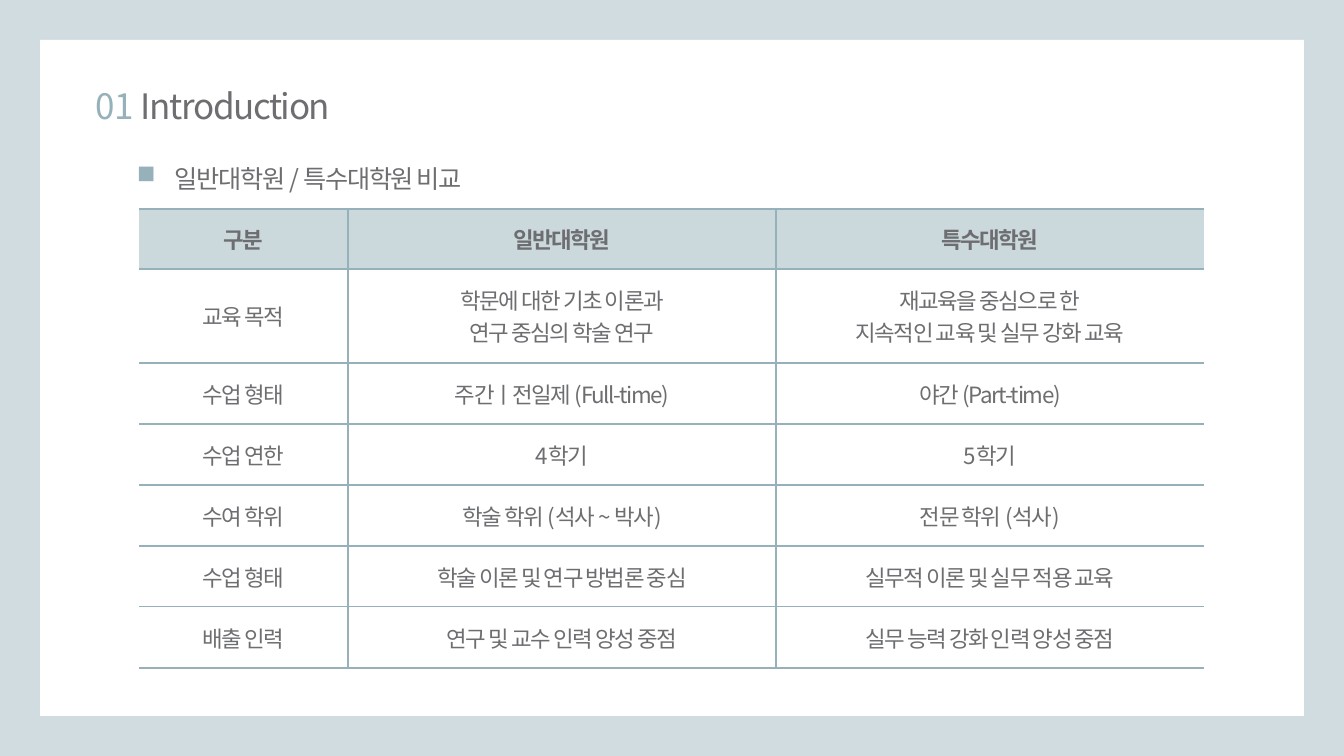
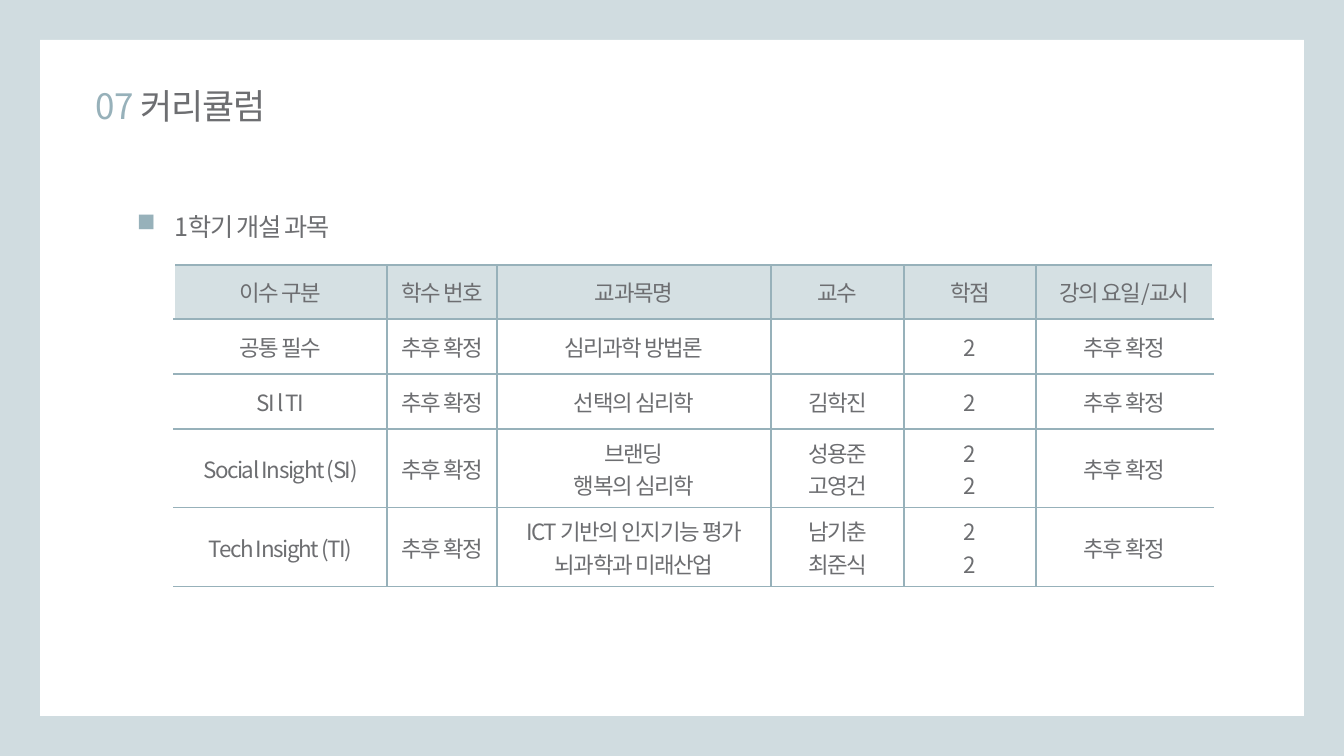
"""Build two table slides on graduate school programmes."""
from lxml import etree
from pptx import Presentation
from pptx import util as u
from pptx.dml.color import RGBColor
from pptx.enum import shapes, text
from pptx.oxml.ns import qn

FONT = "Noto Sans CJK KR"
COLORS = {"back": "D0DCE0", "panel": "FFFFFF", "accent": "97B1BA", "ink": "6D6E71",
          "head": "CBD8DC", "pale": "D5E0E3"}
WIDTH, HEIGHT, FRAME = 1344, 756, 40
THIN, THICK = 1, 2.25
PLAIN_STYLE = "{2D5ABB26-0587-4C30-8999-92F81FD0307C}"

SLIDES = [
    {
        "number": "01", "title": "Introduction",
        "subtitle": "일반대학원 / 특수대학원 비교", "subtitle_top": 158,
        "at": (139, 209), "cols": [209, 428, 428], "heights": [60, 94] + [61] * 5,
        "head": "head", "bold": True, "rule": THICK, "side": None,
        "rows": [
            ("구분", "일반대학원", "특수대학원"),
            ("교육 목적", "학문에 대한 기초 이론과\n연구 중심의 학술 연구",
             "재교육을 중심으로 한\n지속적인 교육 및 실무 강화 교육"),
            ("수업 형태", "주간ㅣ전일제 (Full-time)", "야간 (Part-time)"),
            ("수업 연한", "4학기", "5학기"),
            ("수여 학위", "학술 학위 (석사 ~ 박사)", "전문 학위 (석사)"),
            ("수업 형태", "학술 이론 및 연구 방법론 중심", "실무적 이론 및 실무 적용 교육"),
            ("배출 인력", "연구 및 교수 인력 양성 중점", "실무 능력 강화 인력 양성 중점"),
        ],
    },
    {
        "number": "07", "title": "커리큘럼",
        "subtitle": "1학기 개설 과목", "subtitle_top": 206,
        "at": (174, 265), "cols": [213, 110, 274, 133, 132, 177],
        "heights": [54, 55, 55, 79, 79],
        "head": "pale", "bold": False, "rule": THIN, "side": "panel",
        "rows": [
            ("이수 구분", "학수 번호", "교과목명", "교수", "학점", "강의 요일/교시"),
            ("공통 필수", "추후 확정", "심리과학 방법론", "", "2", "추후 확정"),
            ("SI l TI", "추후 확정", "선택의 심리학", "김학진", "2", "추후 확정"),
            ("Social Insight (SI)", "추후 확정", "브랜딩\n행복의 심리학",
             "성용준\n고영건", "2\n2", "추후 확정"),
            ("Tech Insight (TI)", "추후 확정", "ICT 기반의 인지기능 평가\n뇌과학과 미래산업",
             "남기춘\n최준식", "2\n2", "추후 확정"),
        ],
    },
]


def px(n):
    return u.Emu(round(n * 12192000 / WIDTH))


def rgb(name):
    return RGBColor.from_string(COLORS[name])


def style(p, size, color="ink", bold=False, spacing=-100):
    f = p.font
    f.size, f.bold, f.name = u.Pt(size), bold, FONT
    f.color.rgb = rgb(color)
    rpr = p._p.pPr.find(qn("a:defRPr"))
    rpr.set("spc", str(spacing))
    etree.SubElement(rpr, qn("a:ea"), typeface=FONT)


def add_text(s, box, words, size, **look):
    tf = s.shapes.add_textbox(*map(px, box)).text_frame
    tf.word_wrap = True
    tf.vertical_anchor = text.MSO_ANCHOR.MIDDLE
    tf.text = words
    p = tf.paragraphs[0]
    style(p, size, **look)
    return p


def add_bullet(p):
    ppr = p._p.get_or_add_pPr()
    ppr.set("marL", str(px(38)))
    ppr.set("indent", str(px(-38)))
    color = etree.Element(qn("a:buClr"))
    etree.SubElement(color, qn("a:srgbClr"), val=COLORS["accent"])
    mark = etree.Element(qn("a:buChar"), char="■")
    ppr.insert(0, color)
    ppr.insert(1, mark)


def add_border(cell, side, width, color):
    ln = etree.SubElement(cell._tc.get_or_add_tcPr(), qn(f"a:ln{side}"), w=str(u.Pt(width)))
    if color is None:
        etree.SubElement(ln, qn("a:noFill"))
    else:
        fill = etree.SubElement(ln, qn("a:solidFill"))
        etree.SubElement(fill, qn("a:srgbClr"), val=COLORS[color])


def add_grid(s, d):
    rows, cols, heights = d["rows"], d["cols"], d["heights"]
    box = (*d["at"], sum(cols), sum(heights))
    table = s.shapes.add_table(len(rows), len(cols), *map(px, box)).table
    table.first_row = table.horz_banding = False
    table._tbl.tblPr.find(qn("a:tableStyleId")).text = PLAIN_STYLE
    for column, width in zip(table.columns, cols):
        column.width = px(width)
    last_row, last_col = len(rows) - 1, len(cols) - 1
    for i, (row, height) in enumerate(zip(rows, heights)):
        table.rows[i].height = px(height)
        for j, words in enumerate(row):
            cell = table.cell(i, j)
            cell.vertical_anchor = text.MSO_ANCHOR.MIDDLE
            add_border(cell, "L", THIN, "accent" if j else d["side"])
            add_border(cell, "R", THIN, "accent" if j < last_col else d["side"])
            add_border(cell, "T", d["rule"] if i < 2 else THIN, "accent")
            add_border(cell, "B", d["rule"] if i in (0, last_row) else THIN, "accent")
            if i:
                cell.fill.background()
            else:
                cell.fill.solid()
                cell.fill.fore_color.rgb = rgb(d["head"])
            cell.text_frame.text = words
            for p in cell.text_frame.paragraphs:
                p.alignment = text.PP_ALIGN.CENTER
                style(p, 16, bold=d["bold"] and i == 0)


def add_base(prs):
    s = prs.slides.add_slide(prs.slide_layouts[6])
    s.background.fill.solid()
    s.background.fill.fore_color.rgb = rgb("back")
    box = (FRAME, FRAME, WIDTH - 2 * FRAME, HEIGHT - 2 * FRAME)
    sp = s.shapes.add_shape(shapes.MSO_SHAPE.RECTANGLE, *map(px, box))
    sp.shadow.inherit = False
    sp.fill.solid()
    sp.fill.fore_color.rgb = rgb("panel")
    sp.line.fill.background()
    return s


def main():
    prs = Presentation()
    prs.slide_width, prs.slide_height = px(WIDTH), px(HEIGHT)
    for d in SLIDES:
        s = add_base(prs)
        add_text(s, (131, 80, 334, 52), d["title"], 25)
        add_text(s, (86, 80, 58, 52), d["number"], 25, color="accent", spacing=-50)
        add_grid(s, d)
        add_bullet(add_text(s, (127, d["subtitle_top"], 406, 40), d["subtitle"], 18))
    prs.save("out.pptx")


if __name__ == "__main__":
    main()
